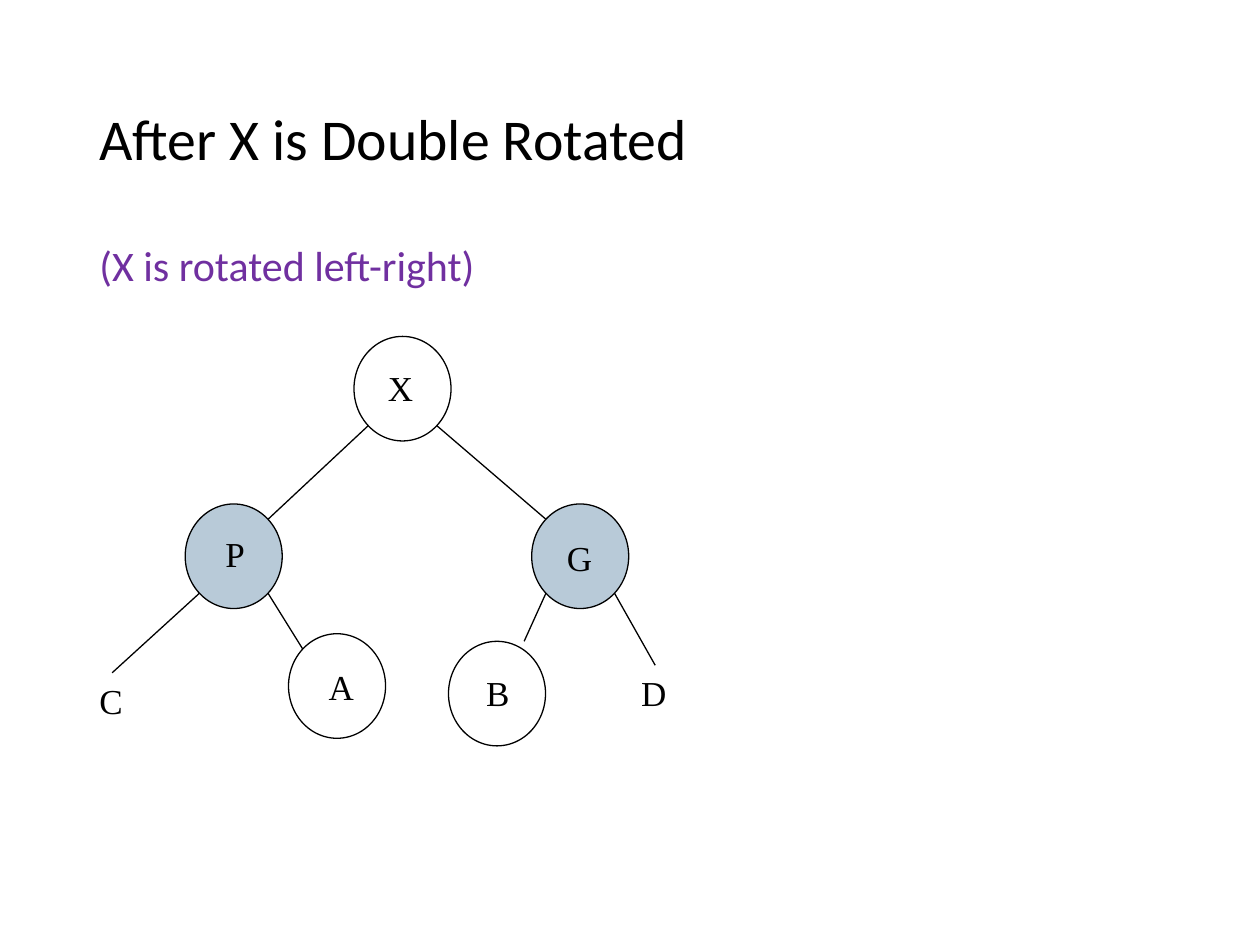
import math

import lxml.etree
import pptx
import pptx.dml.color
import pptx.enum.shapes
import pptx.enum.text
import pptx.oxml.ns
import pptx.util

COLS, ROWS = 100, 75
HUES = {"ink": "000000", "note": "7030A0", "node": "B8CAD8"}
SIZE = (7.7, 8.3)
NODES = {
    "X": (21.2, 0, None),
    "A": (16, 23.6, None),
    "B": (28.7, 24.2, None),
    "G": (35.3, 13.3, "node"),
    "P": (7.8, 13.3, "node"),
}
LABELS = {
    "X": (22.9, 1.9, 4.1),
    "P": (10, 15.1, 3.8),
    "G": (37.1, 15.4, 4.3),
    "A": (18.2, 25.6, 4.1),
    "B": (30.7, 26.1, 4),
    "C": (0, 26.7, 4.1),
    "D": (43, 26.1, 4.1),
}
LEAFS = {"C": (2, 26.7), "D": (45.1, 26.1), "B": (34.7, 24.2)}
EDGES = [("X", -1, "P"), ("P", -1, "C"), ("P", 1, "A"),
         ("G", 1, "D"), ("G", -1, "B"), ("X", 1, "G")]


def grid(num):
    """Turn grid units into a length; columns and rows are equal."""
    return pptx.util.Inches(num * 10 / COLS)


def hue(name):
    """Give the named colour."""
    return pptx.dml.color.RGBColor.from_string(HUES[name])


def add_text(slide, text, box, font="Times New Roman", size=20, color="ink",
             wrap=True, mid=False, lead=None):
    """Place one line of text in a box."""
    frame = slide.shapes.add_textbox(*map(grid, box)).text_frame
    frame.word_wrap = wrap
    anchor = pptx.enum.text.MSO_ANCHOR
    frame.vertical_anchor = anchor.MIDDLE if mid else anchor.TOP
    para = frame.paragraphs[0]
    para.line_spacing = lead
    run = para.add_run()
    run.text = text
    run.font.name = font
    run.font.size = pptx.util.Pt(size)
    run.font.color.rgb = hue(color)


def ink(line):
    """Give a line its thin black stroke."""
    line.color.rgb = hue("ink")
    line.width = pptx.util.Pt(0.75)


def add_node(slide, box, fill):
    """Draw one tree node."""
    kind = pptx.enum.shapes.MSO_SHAPE.OVAL
    oval = slide.shapes.add_shape(kind, *map(grid, box))
    oval.shadow.inherit = False
    if fill:
        oval.fill.solid()
        oval.fill.fore_color.rgb = hue(fill)
    else:
        oval.fill.background()
    ink(oval.line)


def add_edge(slide, start, end):
    """Draw one tree edge."""
    kind = pptx.enum.shapes.MSO_CONNECTOR.STRAIGHT
    edge = slide.shapes.add_connector(kind, *map(grid, start + end))
    ink(edge.line)
    lxml.etree.SubElement(edge._element.spPr, pptx.oxml.ns.qn("a:effectLst"))


def rim(name, side, down):
    """Find the point on a node's rim at 45 degrees."""
    left, top, _ = NODES[name]
    wide, high = SIZE
    turn = math.sqrt(0.5)
    return (left + wide / 2 * (1 + side * turn),
            top + high / 2 * (1 + down * turn))


def add_head(slide, box):
    """Place the title and the note below it."""
    left, top, wide, high = box
    add_text(slide, "After X is Double Rotated", box,
             font="Calibri", size=33, mid=True, lead=0.9)
    add_text(slide, "(X is rotated left-right)",
             (left, top + high, 32.2, 5),
             font="Calibri", size=24, color="note", wrap=False)


def add_tree(slide, left, top):
    """Place nodes, labels and edges from the tree's corner."""
    def shift(spot):
        """Move a point into the tree's box."""
        return left + spot[0], top + spot[1]

    for *spot, fill in NODES.values():
        add_node(slide, shift(spot) + SIZE, fill)
    for text, (*spot, wide) in LABELS.items():
        add_text(slide, text, shift(spot) + (wide, 4.4))
    for name, side, child in EDGES:
        end = LEAFS.get(child) or rim(child, -side, -1)
        add_edge(slide, shift(rim(name, side, 1)), shift(end))


def main():
    """Build and save the slide."""
    deck = pptx.Presentation()
    deck.slide_width, deck.slide_height = grid(COLS), grid(ROWS)
    slide = deck.slides.add_slide(deck.slide_layouts[6])
    add_head(slide, (6.9, 4, 86.2, 14.5))
    add_tree(slide, 6.9, 26.7)
    deck.save("out.pptx")


if __name__ == "__main__":
    main()
